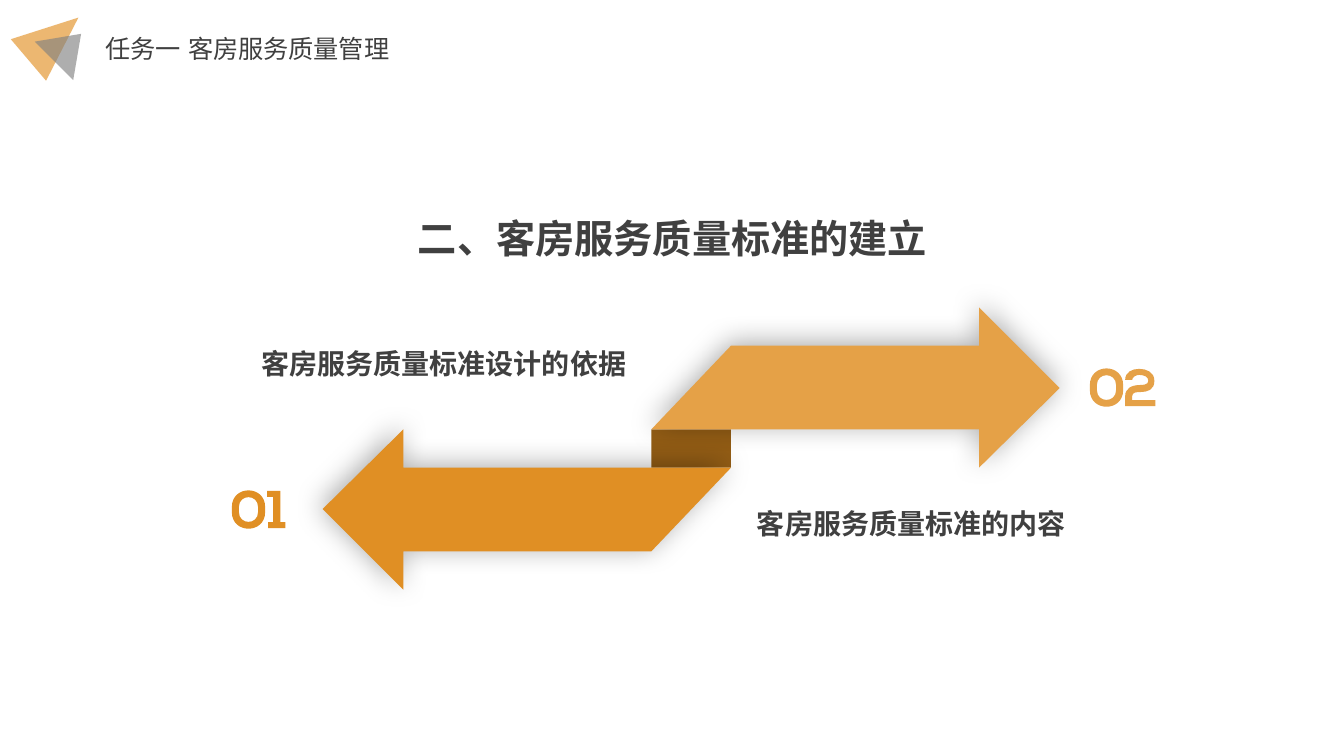
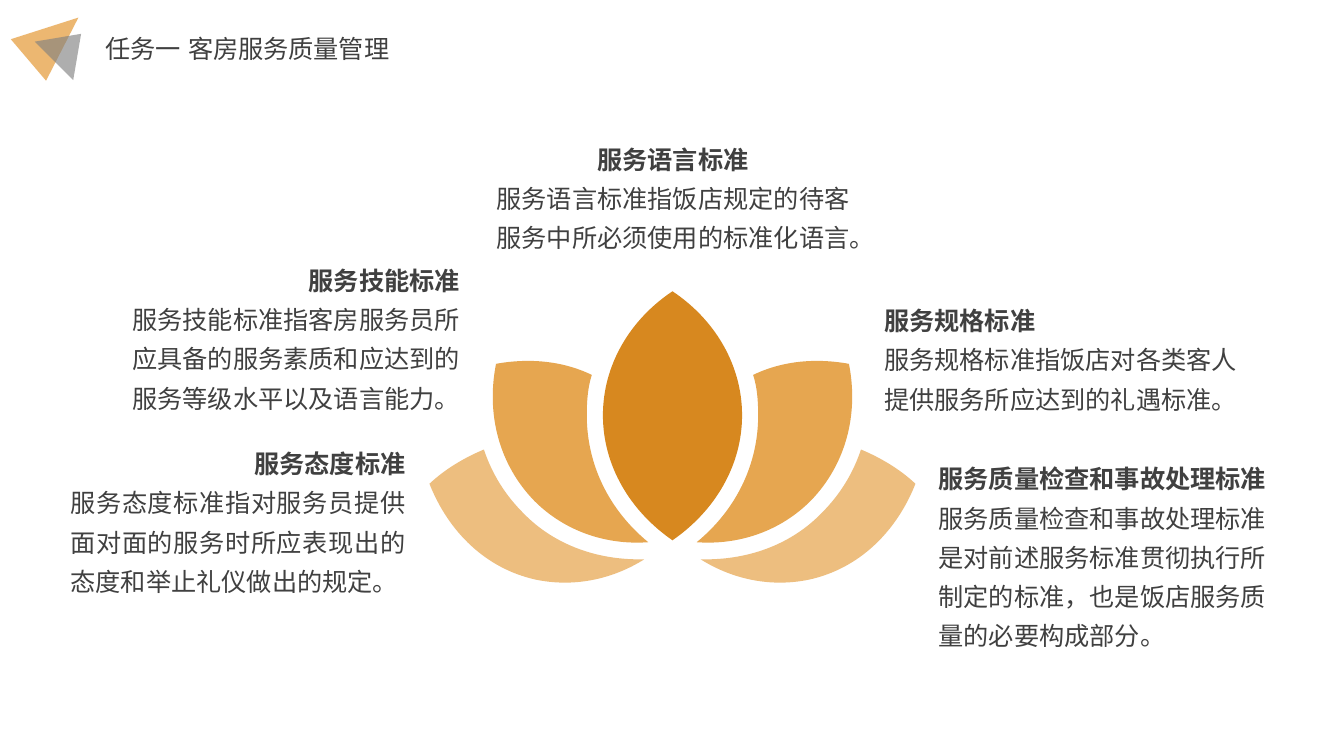
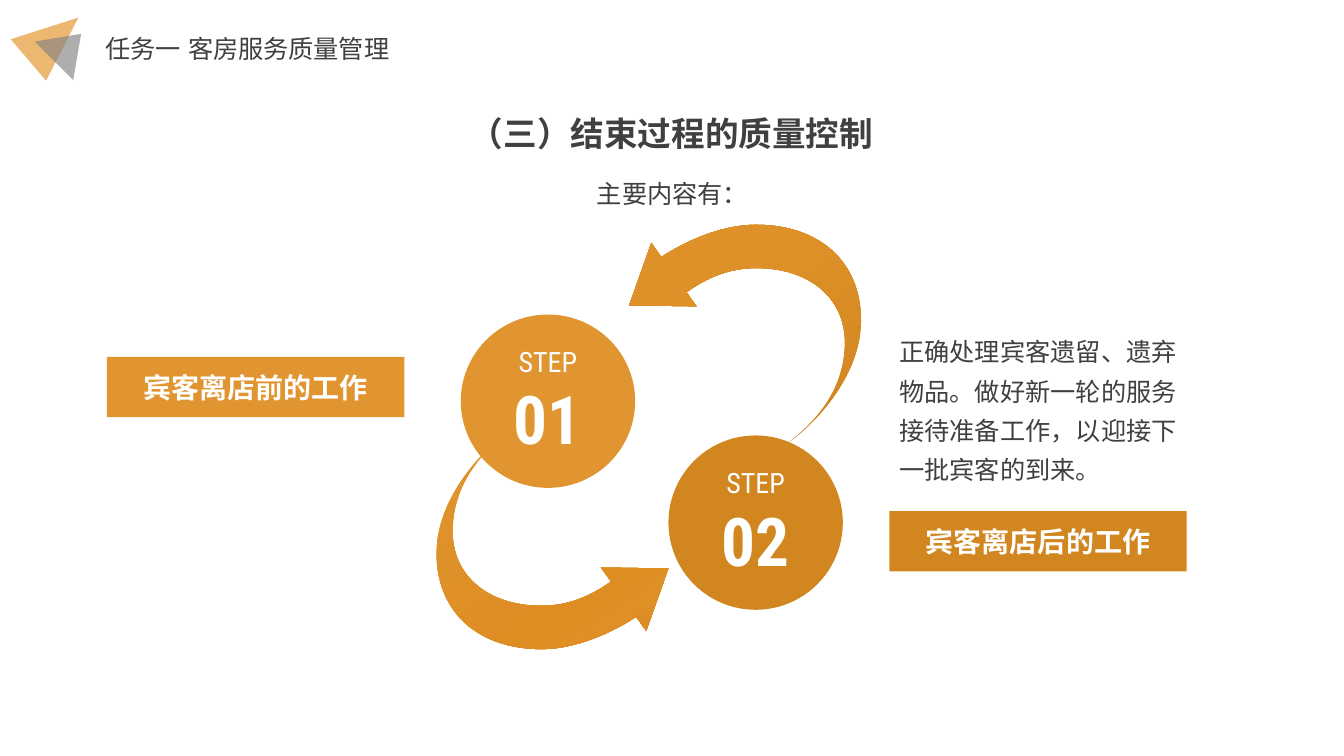
from pptx import Presentation
from pptx.dml.color import RGBColor
from pptx.enum import shapes, text
from pptx.oxml import parse_xml
from pptx.oxml.ns import nsdecls, qn

PX = 9144
COLOURS = {
    "ink": "404040", "white": "FFFFFF", "grey": "808080", "logo": "E18E1F",
    "orange": "E08F24", "sand": "E5A147", "fold": "935D15",
    "petal": "D7881F", "petal_inner": "E6A650", "petal_outer": "EDBE7F",
    "light": "E09530", "dark": "D28620", "mid": "DF9129",
    "deep": "DE8D22", "warm": "DE8F26",
}
DEJAVU, NOTO, ARIAL, ROBOTO = "DejaVu Sans", "Noto Sans CJK SC", "Arial", "Roboto Condensed"
LEFT, CENTRE = text.PP_ALIGN.LEFT, text.PP_ALIGN.CENTER
RIGHT, JUSTIFY = text.PP_ALIGN.RIGHT, text.PP_ALIGN.JUSTIFY

ZERO = [
    [(0, 22), (0, 0, 33, 0, 33, 22), (33, 27), (33, 49, 0, 49, 0, 27)],
    [(7, 27), (7, 40, 26, 40, 26, 27), (26, 22), (26, 9, 7, 9, 7, 22)],
]
ONE = [[(36, 37), (41, 37), (41, 12), (35, 12), (35, 6), (48, 6),
        (48, 37), (53, 37), (53, 43), (36, 43)]]
TWO = [[(35, 17), (35, 9, 42, 6, 49, 6), (56, 6, 64, 9, 64, 18),
        (64, 27, 57, 29, 50, 29), (47, 29, 42, 29, 42, 33), (42, 37),
        (65, 37), (65, 43), (35, 43), (35, 40, 35, 37, 35, 33),
        (35, 25, 42, 22, 50, 22), (52, 22, 58, 22, 58, 18),
        (58, 14, 54, 12, 49, 12), (46, 12, 42, 14, 42, 17)]]
RIBBON = [[(325, 0), (405, 80), (325, 159), (325, 121), (0, 121), (79, 38), (325, 38)]]
PETAL = [[(-69, 123), (-69, 173, -42, 218, 0, 247), (42, 218, 69, 173, 69, 123),
          (69, 73, 42, 28, 0, 0), (-42, 28, -69, 73, -69, 123)]]
PETAL_INNER = [[(175, 72), (142, 66, 109, 69, 80, 83), (84, 95, 85, 109, 85, 123),
                (85, 172, 63, 217, 24, 249), (66, 252, 107, 238, 137, 208),
                (172, 172, 185, 122, 175, 72)]]
PETAL_OUTER = [[(187, 157), (179, 181, 166, 202, 148, 220), (119, 250, 78, 266, 33, 266),
                (28, 266), (60, 286, 98, 294, 136, 286), (185, 275, 222, 239, 241, 191),
                (225, 176, 206, 165, 187, 157)]]
SWOOSH = [[(73, 0), (33, 29, 0, 76, 0, 122), (0, 181, 42, 217, 104, 217),
           (137, 217, 172, 202, 198, 185), (208, 199), (230, 137), (163, 136),
           (173, 150), (152, 165, 130, 174, 104, 174), (52, 174, 16, 145, 16, 100),
           (16, 58, 40, 25, 73, 0)]]


def px(*lengths):
    """Turn px lengths into EMU."""
    return [round(n * PX) for n in lengths]


def rgb(name):
    """Look up a named colour."""
    return RGBColor.from_string(COLOURS[name])


def paint(sp, fill):
    """Give a shape a flat fill, no line and no shadow."""
    sp.shadow.inherit = False
    sp.fill.solid()
    sp.fill.fore_color.rgb = rgb(fill)
    sp.line.fill.background()
    return sp


def write(sp, lines, colour="ink", spacing=None, anchor=text.MSO_ANCHOR.TOP):
    """Fill a shape with lines of (text, size, font, bold, alignment)."""
    tf = sp.text_frame
    tf.word_wrap = True
    tf.vertical_anchor = anchor
    tf.text = "\n".join(line[0] for line in lines)
    for p, (_, size, font, bold, align) in zip(tf.paragraphs, lines):
        p.alignment = align
        if spacing:
            p.line_spacing = spacing
        for r in p.runs:
            r.font.size = size * 12700
            r.font.name = font
            r.font.bold = bold
            r.font.color.rgb = rgb(colour)
            ea = parse_xml(f'<a:ea {nsdecls("a")} typeface="{font}"/>')
            r.font._element.find(qn("a:latin")).addnext(ea)
    return sp


def text_box(s, box, lines, spacing=None):
    """Add a wrapped text box."""
    sp = write(s.shapes.add_textbox(*px(*box)), lines, spacing=spacing)
    sp.text_frame.auto_size = text.MSO_AUTO_SIZE.SHAPE_TO_FIT_TEXT
    return sp


def slide_title(s, box, title, size, font, spacing=None):
    """Place and format the title placeholder."""
    sp = s.shapes.title
    sp.left, sp.top, sp.width, sp.height = px(*box)
    write(sp, [(title, size, font, True, CENTRE)], spacing=spacing)
    sp.text_frame.auto_size = text.MSO_AUTO_SIZE.NONE


def bend(sp, paths):
    """Join the three segments of each curved part into one cubic curve."""
    segments = iter(list(sp.element.iter(qn("a:lnTo"))))
    for part in (part for path in paths for part in path[1:]):
        first = next(segments)
        if len(part) == 6:
            curve = parse_xml(f'<a:cubicBezTo {nsdecls("a")}/>')
            first.addprevious(curve)
            for segment in (first, next(segments), next(segments)):
                curve.append(segment[0])
                segment.getparent().remove(segment)


def outline(s, paths, x, y, fill, sx=1, sy=1):
    """Draw closed paths from an origin, mirrored where a sign is -1."""
    contours = [[tuple(px(x + sx * part[i], y + sy * part[i + 1]))
                 for part in path for i in range(0, len(part), 2)] for path in paths]
    builder = s.shapes.build_freeform(*contours[0][0], scale=1.0)
    for i, points in enumerate(contours):
        if i:
            builder.move_to(*points[0])
        builder.add_line_segments(points[1:], close=False)
        builder._add_close()
    sp = builder.convert_to_shape()
    bend(sp, paths)
    return paint(sp, fill)


def cast_shadow(sp, angle):
    """Add a soft outer shadow."""
    sp.element.spPr.find(qn("a:effectLst")).append(parse_xml(
        f'<a:outerShdw {nsdecls("a")} blurRad="254000" dist="38100" dir="{angle * 60000}" '
        'algn="ctr" rotWithShape="0"><a:srgbClr val="000000"><a:alpha val="32000"/>'
        '</a:srgbClr></a:outerShdw>'))


def shade(sp, stops, angle):
    """Replace a flat fill with a linear gradient."""
    marks = "".join(f'<a:gs pos="{at * 1000}"><a:srgbClr val="{COLOURS[name]}"/></a:gs>'
                    for at, name in stops)
    flat = sp.element.spPr.find(qn("a:solidFill"))
    flat.getparent().replace(flat, parse_xml(
        f'<a:gradFill {nsdecls("a")} rotWithShape="1"><a:gsLst>{marks}</a:gsLst>'
        f'<a:lin ang="{angle * 60000}" scaled="0"/></a:gradFill>'))


def master_header(prs, s):
    """Build the header with its two triangles and move it to the master."""
    tree = prs.slide_master.element.cSld.spTree
    for box, turn, fill in [((26, 6, 54, 65), 49.7, "logo"), ((40, 28, 54, 38), 45.1, "grey")]:
        sp = paint(s.shapes.add_shape(shapes.MSO_SHAPE.ISOSCELES_TRIANGLE, *px(*box)), fill)
        sp.rotation = turn
        colour = sp.element.spPr.find(qn("a:solidFill"))[0]
        colour.append(parse_xml(f'<a:alpha {nsdecls("a")} val="63000"/>'))
        tree.append(sp.element)
    label = text_box(s, (95, 28, 780, 40), [("任务一 客房服务质量管理", 18, DEJAVU, False, LEFT)])
    label.text_frame.paragraphs[0].runs[0].font._element.set("spc", "-10")
    tree.append(label.element)
    for i, e in enumerate(tree.xpath(".//p:cNvPr"), 1):
        e.set("id", str(i))


def ribbon_arrows(s, x, y):
    """Draw the folded double arrow from its top left corner."""
    paint(s.shapes.add_shape(shapes.MSO_SHAPE.RECTANGLE, *px(x + 326, y + 121, 79, 38)), "fold")
    cast_shadow(outline(s, RIBBON, x + 326, y, "sand"), 270)
    cast_shadow(outline(s, RIBBON, x + 405, y + 280, "orange", -1, -1), 225)


def number(s, digit, x, y, fill):
    """Draw a two-digit number that starts with zero."""
    for paths in (ZERO, digit):
        outline(s, paths, x, y, fill)


def section_slide(s):
    """Build the section opener."""
    slide_title(s, (231, 208, 872, 57), "二、客房服务质量标准的建立", 28, DEJAVU)
    ribbon_arrows(s, 320, 305)
    for box, label, align in [((204, 329, 427, 50), "客房服务质量标准设计的依据", RIGHT),
                              ((741, 488, 390, 50), "客房服务质量标准的内容", LEFT)]:
        text_box(s, box, [(label, 20, NOTO, True, align)], 1.3)
    number(s, ONE, 230, 481, "orange")
    number(s, TWO, 1081, 360, "sand")


def lotus(s, axis, y):
    """Draw the five petals around a vertical axis."""
    for side in (1, -1):
        outline(s, PETAL_INNER, axis, y, "petal_inner", side)
        outline(s, PETAL_OUTER, axis, y, "petal_outer", side)
    outline(s, PETAL, axis, y, "petal")


def standards_slide(s):
    """Build the lotus of five service standards."""
    lotus(s, 667, 289)
    notes = [
        ((474, 129, 387, 128), CENTRE, CENTRE, "服务语言标准",
         "服务语言标准指饭店规定的待客服务中所必须使用的标准化语言。"),
        ((108, 249, 358, 168), RIGHT, RIGHT, "服务技能标准",
         "服务技能标准指客房服务员所应具备的服务素质和应达到的服务等级水平以及语言能力。"),
        ((867, 289, 371, 128), LEFT, LEFT, "服务规格标准",
         "服务规格标准指饭店对各类客人提供服务所应达到的礼遇标准。"),
        ((60, 431, 352, 168), RIGHT, JUSTIFY, "服务态度标准",
         "服务态度标准指对服务员提供面对面的服务时所应表现出的态度和举止礼仪做出的规定。"),
        ((921, 446, 350, 207), LEFT, LEFT, "服务质量检查和事故处理标准",
         "服务质量检查和事故处理标准是对前述服务标准贯彻执行所制定的标准，也是饭店服务质量的必要构成部分。"),
    ]
    for box, head_align, body_align, head, body in notes:
        text_box(s, box, [(head, 18, ARIAL, True, head_align),
                          (body, 18, ARIAL, False, body_align)], 1.3)


def step(s, circle, label_box, digits, label, fill):
    """Add a numbered circle and its label bar."""
    middle = text.MSO_ANCHOR.MIDDLE
    sp = paint(s.shapes.add_shape(shapes.MSO_SHAPE.OVAL, *px(*circle)), fill)
    tf = sp.text_frame
    tf.margin_left, tf.margin_right, tf.margin_top, tf.margin_bottom = px(7, 7, 6, 6)
    write(sp, [("STEP", 20, ROBOTO, False, CENTRE), (digits, 48, ROBOTO, True, CENTRE)],
          "white", anchor=middle)
    bar = paint(s.shapes.add_shape(shapes.MSO_SHAPE.RECTANGLE, *px(*label_box)), fill)
    write(bar, [(label, 20, NOTO, True, CENTRE)], "white", anchor=middle)


def steps_slide(s):
    """Build the two-step cycle."""
    slide_title(s, (304, 87, 724, 64), "（三）结束过程的质量控制", 24, ARIAL, 1.5)
    shade(outline(s, SWOOSH, 433, 427, "light"),
          [(0, "light"), (74, "deep"), (83, "warm"), (100, "dark")], 55)
    shade(outline(s, SWOOSH, 854, 440, "light", -1, -1),
          [(0, "dark"), (74, "mid"), (83, "mid"), (100, "light")], 235)
    step(s, (457, 312, 173, 172), (106, 354, 295, 60), "01", "宾客离店前的工作", "light")
    step(s, (663, 432, 173, 173), (882, 507, 295, 60), "02", "宾客离店后的工作", "dark")
    text_box(s, (341, 157, 652, 50), [("主要内容有：", 18, ARIAL, False, CENTRE)], 1.5)
    text_box(s, (882, 320, 295, 168), [
        ("正确处理宾客遗留、遗弃物品。做好新一轮的服务接待准备工作，以迎接下一批宾客的到来。",
         18, ARIAL, False, JUSTIFY)], 1.3)


def main():
    """Build and save the deck."""
    prs = Presentation()
    prs.slide_width, prs.slide_height = px(1333, 750)
    title_only, blank = prs.slide_layouts[5], prs.slide_layouts[6]
    pages = [(title_only, section_slide), (blank, standards_slide), (title_only, steps_slide)]
    for i, (layout, build) in enumerate(pages):
        s = prs.slides.add_slide(layout)
        if i == 0:
            master_header(prs, s)
        build(s)
    prs.save("out.pptx")


if __name__ == "__main__":
    main()
